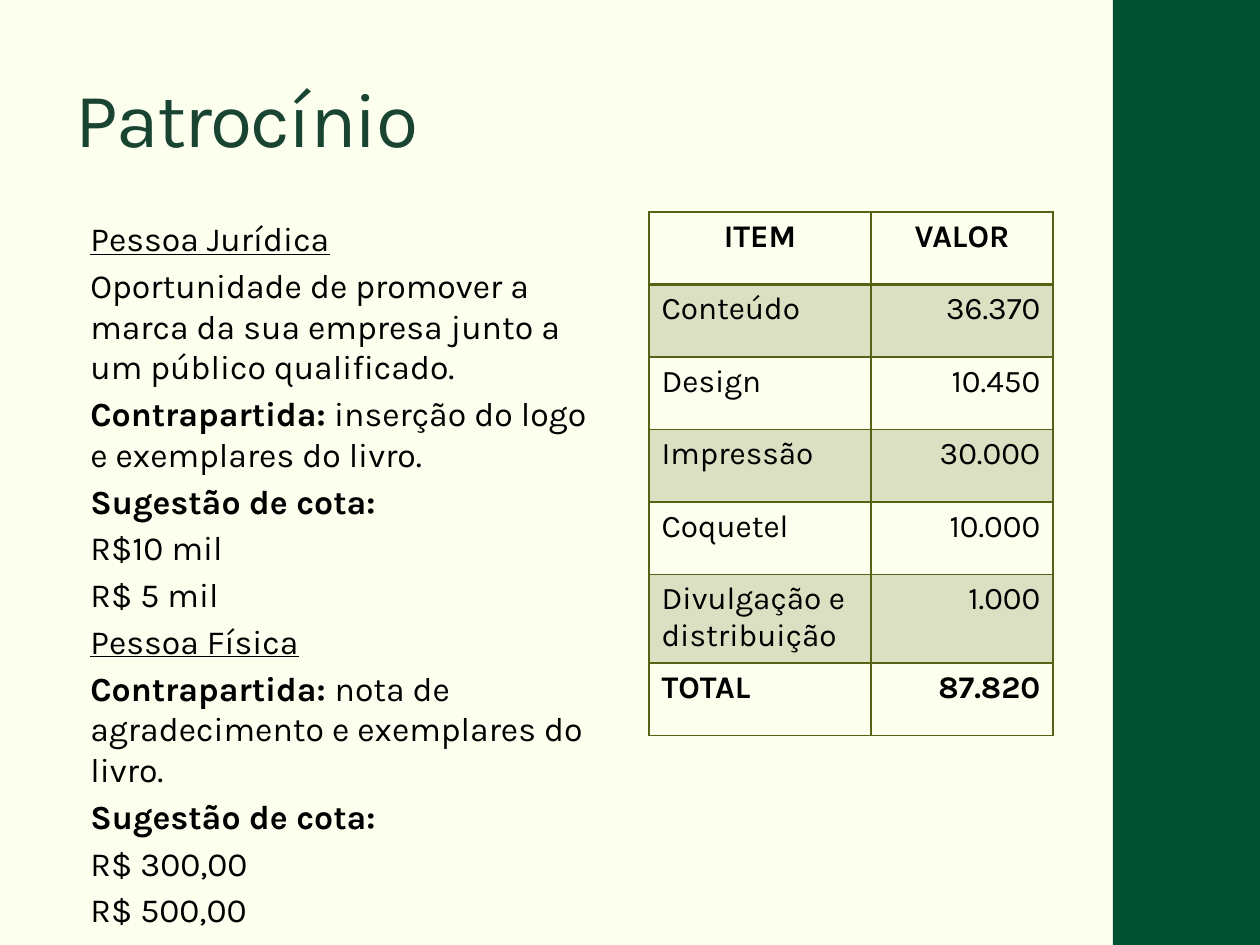
from lxml.etree import SubElement
from pptx import Presentation
from pptx.dml.color import RGBColor
from pptx.enum.shapes import MSO_SHAPE
from pptx.enum.text import MSO_ANCHOR, PP_ALIGN
from pptx.oxml.ns import qn
from pptx.util import Emu, Pt

# Content: a paragraph is a list of (text, style) runs
TITLE = "Patrocínio"
BODY = [
    [("Pessoa Jurídica", "underline")],
    [("Oportunidade de promover a marca da sua empresa junto a um público qualificado.", "")],
    [("Contrapartida:", "bold"), (" inserção do logo e exemplares do livro.", "")],
    [("Sugestão de cota:", "bold")],
    [("R$10 mil", "")],
    [("R$ 5 mil", "")],
    [("Pessoa Física", "underline")],
    [("Contrapartida: ", "bold"), ("nota de agradecimento e exemplares do livro.", "")],
    [("Sugestão de cota:", "bold")],
    [("R$ 300,00", "")],
    [("R$ 500,00", "")],
]
BUDGET = [
    ("ITEM", "VALOR"),
    ("Conteúdo", "36.370"),
    ("Design", "10.450"),
    ("Impressão", "30.00O"),
    ("Coquetel", "10.000"),
    ("Divulgação e distribuição", "1.000"),
    ("TOTAL", "87.820"),
]

# Format
FONT = "Karla"
CREAM = RGBColor(0xFC, 0xFF, 0xED)
GREEN = RGBColor(0x00, 0x50, 0x31)
TITLE_GREEN = RGBColor(0x19, 0x44, 0x31)
OLIVE = RGBColor(0x58, 0x62, 0x15)
BAND = RGBColor(0xDB, 0xE0, 0xC2)
BLACK = RGBColor(0, 0, 0)

PX = 914400 // 126
WIDTH, HEIGHT = 1260, 945
COLUMNS = (222, 182)
TABLE_HEIGHT = 508


def px(*lengths):
    return [Emu(round(length * PX)) for length in lengths]


def write(paragraph, text, size=18, color=BLACK, bold=False, underline=False,
          align=PP_ALIGN.LEFT, spacing=None):
    paragraph.alignment = align
    run = paragraph.add_run()
    run.text = text
    font = run.font
    font.name, font.size, font.bold, font.underline = FONT, Pt(size), bold, underline
    font.color.rgb = color
    if spacing is not None:
        run._r.get_or_add_rPr().set("spc", str(spacing))


def set_borders(cell, bottom_width):
    properties = cell._tc.get_or_add_tcPr()
    for index, side in enumerate(("lnL", "lnR", "lnT", "lnB")):
        width = bottom_width if side == "lnB" else 1
        line = properties.makeelement(qn(f"a:{side}"), {"w": str(Pt(width))})
        fill = SubElement(line, qn("a:solidFill"))
        SubElement(fill, qn("a:srgbClr"), val=str(OLIVE))
        properties.insert(index, line)


presentation = Presentation()
presentation.slide_width, presentation.slide_height = px(WIDTH, HEIGHT)
slide = presentation.slides.add_slide(presentation.slide_layouts[5])
slide.background.fill.solid()
slide.background.fill.fore_color.rgb = CREAM

# Side band
side_band = slide.shapes.add_shape(MSO_SHAPE.RECTANGLE, *px(1113, 0, WIDTH - 1113, HEIGHT))
side_band.shadow.inherit = False
side_band.fill.solid()
side_band.fill.fore_color.rgb = GREEN
side_band.line.fill.background()

# Title
title = slide.shapes.title
title.left, title.top, title.width, title.height = px(63, 38, 1050, 157)
title.text_frame.vertical_anchor = MSO_ANCHOR.MIDDLE
write(title.text_frame.paragraphs[0], TITLE, size=44, color=TITLE_GREEN, spacing=-100)

# Sponsorship text
frame = slide.shapes.add_textbox(*px(78, 212, 544, 632)).text_frame
frame.word_wrap = True
for number, runs in enumerate(BODY):
    paragraph = frame.add_paragraph() if number else frame.paragraphs[0]
    if number:
        paragraph.space_before = Pt(3.6)
    for text, style in runs:
        write(paragraph, text, size=19.3, bold=style == "bold", underline=style == "underline")

# Budget table
table = slide.shapes.add_table(
    len(BUDGET), len(COLUMNS), *px(649, 212, sum(COLUMNS), TABLE_HEIGHT)).table
table.first_row = table.horz_banding = False
for column, width in zip(table.columns, px(*COLUMNS)):
    column.width = width
for row, values in enumerate(BUDGET):
    table.rows[row].height = px(TABLE_HEIGHT / len(BUDGET))[0]
    header = row == 0
    for column, value in enumerate(values):
        cell = table.cell(row, column)
        if row % 2:
            cell.fill.solid()
            cell.fill.fore_color.rgb = BAND
        else:
            cell.fill.background()
        set_borders(cell, 2 if header else 1)
        align = PP_ALIGN.CENTER if header else (PP_ALIGN.LEFT, PP_ALIGN.RIGHT)[column]
        write(cell.text_frame.paragraphs[0], value, align=align,
              bold=row in (0, len(BUDGET) - 1))

presentation.save("out.pptx")
